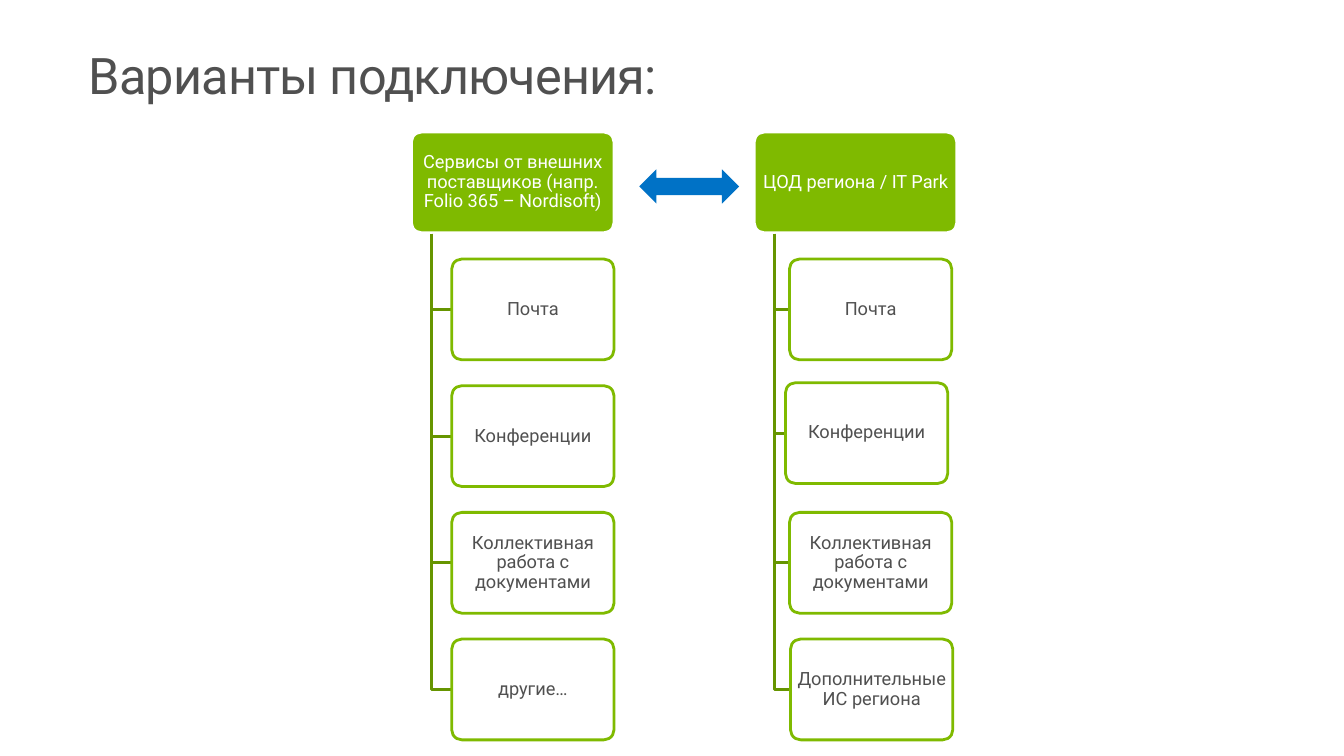
from dataclasses import dataclass

from lxml.etree import SubElement
from pptx import Presentation
from pptx.dml.color import RGBColor
from pptx.enum.shapes import MSO_SHAPE
from pptx.enum.text import MSO_ANCHOR, MSO_AUTO_SIZE, PP_ALIGN
from pptx.oxml.ns import qn
from pptx.util import Inches, Pt


@dataclass(frozen=True)
class Theme:
    """Colours, font and sizes of the slide."""

    font: str = "Roboto"
    green: str = "7FBA00"
    dark_green: str = "669500"
    blue: str = "0072C6"
    grey: str = "505050"
    white: str = "FFFFFF"
    title_size: int = 36
    label_size: int = 13
    line_width: int = 2


THEME = Theme()
HEAD_TOP, HEAD_WIDTH, BOX_HEIGHT = 1.31, 2.01, 1
TRUNK_OFFSET = 0.2
ITEM_TOP, ITEM_WIDTH = 2.57, 1.61
ITEM_PITCH = (6.34 - ITEM_TOP) / 3

BRANCHES = [
    (4.08, "Сервисы от внешних поставщиков (напр. Folio 365 – Nordisoft)", [
        ("Почта", 0.4, 0),
        ("Конференции", 0.4, 0),
        ("Коллективная работа с документами", 0.4, 0),
        ("другие…", 0.4, 0),
    ]),
    (7.48, "ЦОД региона / IT Park", [
        ("Почта", 0.35, 0),
        ("Конференции", 0.31, -0.03),
        ("Коллективная работа с документами", 0.35, 0),
        ("Дополнительные ИС региона", 0.36, 0),
    ]),
]


def rgb(code):
    """Turn a hex code into a colour."""
    return RGBColor.from_string(code)


def format_text(frame, size, color, alignment, insets):
    """Format the one paragraph of a text frame and return its run."""
    frame.word_wrap = True
    frame.auto_size = MSO_AUTO_SIZE.NONE
    frame.vertical_anchor = MSO_ANCHOR.MIDDLE
    frame.margin_left, frame.margin_top, frame.margin_right, frame.margin_bottom = map(Inches, insets)
    para = frame.paragraphs[0]
    para.alignment = alignment
    para.line_spacing = 0.9
    span = para.runs[0]
    span.font.name = THEME.font
    span.font.size = Pt(size)
    span.font.color.rgb = rgb(color)
    return span


def set_title(page, text):
    """Place and format the slide title."""
    title = page.shapes.title
    title.left, title.top, title.width, title.height = map(Inches, (0.46, 0.48, 12.47, 0.49))
    title.text_frame.text = text
    span = format_text(title.text_frame, THEME.title_size, THEME.grey,
                       PP_ALIGN.LEFT, (0.42, 0.17, 0.06, 0.06))
    span.font._element.set("spc", "-60")


def add_filled(page, kind, position, fill):
    """Add a preset shape with a plain fill and no shadow."""
    shape = page.shapes.add_shape(kind, *map(Inches, position))
    shape.shadow.inherit = False
    shape.fill.solid()
    shape.fill.fore_color.rgb = rgb(fill)
    return shape


def set_line(shape, color):
    """Give a shape the common line width and a colour."""
    shape.line.color.rgb = rgb(color)
    shape.line.width = Pt(THEME.line_width)


def add_box(page, position, text, fill, line, color):
    """Add a rounded box with a centred label."""
    box = add_filled(page, MSO_SHAPE.ROUNDED_RECTANGLE, position, fill)
    box.adjustments[0] = 0.1
    set_line(box, line)
    box.text_frame.text = text
    format_text(box.text_frame, THEME.label_size, color,
                PP_ALIGN.CENTER, (0.03, 0.02, 0.03, 0.02))
    return box


def add_elbow(page, left, top, right, bottom):
    """Draw a line down from the trunk and across to an item."""
    builder = page.shapes.build_freeform(Inches(left), Inches(top))
    corner, end = (Inches(left), Inches(bottom)), (Inches(right), Inches(bottom))
    builder.add_line_segments([corner, end], close=False)
    elbow = builder.convert_to_shape()
    elbow.shadow.inherit = False
    elbow.fill.background()
    set_line(elbow, THEME.dark_green)


def add_branch(page, left, heading, items):
    """Add a heading box with its column of connected items."""
    add_box(page, (left, HEAD_TOP, HEAD_WIDTH, BOX_HEIGHT), heading,
            THEME.green, THEME.white, THEME.white)
    for index, (label, indent, shift) in enumerate(items):
        item_left = left + indent
        top = ITEM_TOP + index * ITEM_PITCH + shift
        add_elbow(page, left + TRUNK_OFFSET, HEAD_TOP + BOX_HEIGHT + 0.01,
                  item_left, top + BOX_HEIGHT / 2)
        box = add_box(page, (item_left, top, ITEM_WIDTH, BOX_HEIGHT), label,
                      THEME.white, THEME.green, THEME.grey)
        fill_color = box.element.spPr.find(qn("a:solidFill")).find(qn("a:srgbClr"))
        SubElement(fill_color, qn("a:alpha"), val="90000")


def main():
    """Build the slide and save it."""
    deck = Presentation()
    deck.slide_width, deck.slide_height = Inches(13.33), Inches(7.5)
    page = deck.slides.add_slide(deck.slide_layouts.get_by_name("Title Only"))
    set_title(page, "Варианты подключения:")
    for left, heading, items in BRANCHES:
        add_branch(page, left, heading, items)
    arrow = add_filled(page, MSO_SHAPE.LEFT_RIGHT_ARROW, (6.34, 1.68, 0.99, 0.34), THEME.blue)
    arrow.line.fill.background()
    deck.save("out.pptx")


if __name__ == "__main__":
    main()
